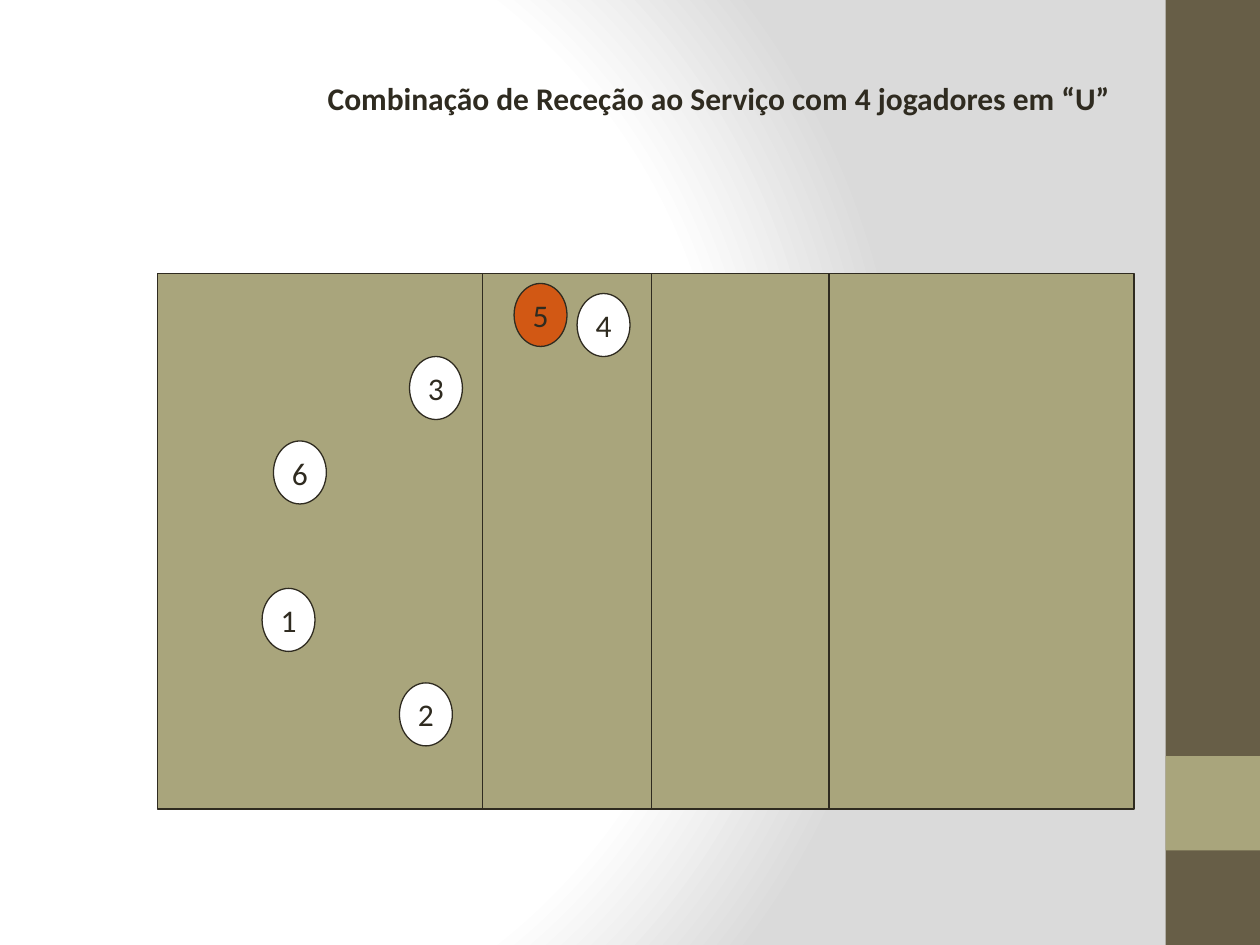
from lxml.etree import SubElement
from pptx import Presentation
from pptx.dml.color import RGBColor
from pptx.enum.shapes import MSO_CONNECTOR, MSO_SHAPE
from pptx.enum.text import MSO_ANCHOR, MSO_AUTO_SIZE, PP_ALIGN
from pptx.oxml import parse_xml
from pptx.oxml.ns import nsdecls, qn
from pptx.util import Inches, Pt

COLORS = {
    "ink": "2F2B20",
    "brown": "675E47",
    "olive": "A9A57C",
    "orange": "D25814",
    "white": "FFFFFF",
    "grey": "DADADA",
}
TEXT_FORMAT = {"name": "Calibri", "size": Pt(18), "bold": False}

# Player number: left, top relative to the court, and fill
PLAYERS = {
    "3": (2.0, 0.66, "white"),
    "4": (3.33, 0.16, "white"),
    "5": (2.83, 0.08, "orange"),
    "6": (0.92, 1.33, "white"),
    "2": (1.92, 3.25, "white"),
    "1": (0.83, 2.5, "white"),
}
COURT_LINES = (2.58, 3.92, 5.33)


def color(name):
    return RGBColor.from_string(COLORS[name])


def write_text(frame, text, align, anchor, **changes):
    frame.word_wrap = False
    frame.vertical_anchor = anchor
    para = frame.paragraphs[0]
    para.alignment = align
    span = para.add_run()
    span.text = text
    for name, value in {**TEXT_FORMAT, **changes}.items():
        setattr(span.font, name, value)
    span.font.color.rgb = color("ink")


def style_line(line):
    line.color.rgb = color("ink")
    line.width = Pt(0.75)


def add_block(page, kind, box, fill, outlined=True):
    block = page.shapes.add_shape(kind, *map(Inches, box))
    block.shadow.inherit = False
    block.fill.solid()
    block.fill.fore_color.rgb = color(fill)
    if outlined:
        style_line(block.line)
    else:
        block.line.fill.background()
    return block


def paint_background(page):
    stops = "".join(
        f'<a:gs pos="{position * 1000}"><a:srgbClr val="{COLORS[name]}"/></a:gs>'
        for position, name in ((0, "white"), (75, "white"), (100, "grey"))
    )
    background = parse_xml(
        f'<p:bg {nsdecls("p", "a")}><p:bgPr><a:gradFill rotWithShape="1">'
        f'<a:gsLst>{stops}</a:gsLst><a:path path="circle">'
        '<a:fillToRect l="20000" t="50000" r="100000" b="50000"/></a:path>'
        "</a:gradFill><a:effectLst/></p:bgPr></p:bg>"
    )
    page.element.cSld.insert(0, background)


def add_side_band(page, box):
    left, top, width, height = box
    add_block(page, MSO_SHAPE.RECTANGLE, box, "brown", outlined=False)
    accent = (left, top + height * 0.8, width, width)
    add_block(page, MSO_SHAPE.RECTANGLE, accent, "olive", outlined=False)


def add_title(page, box, text):
    title = page.shapes.title
    title.left, title.top, title.width, title.height = map(Inches, box)
    write_text(title.text_frame, text, PP_ALIGN.LEFT, MSO_ANCHOR.TOP, bold=True)
    title.text_frame.auto_size = MSO_AUTO_SIZE.SHAPE_TO_FIT_TEXT


def add_court(page, box):
    left, top, width, height = box
    add_block(page, MSO_SHAPE.RECTANGLE, box, "olive")

    # Players
    for number, (across, down, fill) in PLAYERS.items():
        place = (left + across, top + down, 0.42, 0.5)
        player = add_block(page, MSO_SHAPE.OVAL, place, fill)
        write_text(player.text_frame, number, PP_ALIGN.CENTER, MSO_ANCHOR.MIDDLE)

    # Attack lines and net
    for across in COURT_LINES:
        x = Inches(left + across)
        mark = page.shapes.add_connector(
            MSO_CONNECTOR.STRAIGHT, x, Inches(top), x, Inches(top + height)
        )
        style_line(mark.line)
        SubElement(mark.element.spPr, qn("a:effectLst"))


def main():
    deck = Presentation()
    deck.slide_width, deck.slide_height = Inches(10), Inches(7.5)
    page = deck.slides.add_slide(deck.slide_layouts[5])
    paint_background(page)
    add_side_band(page, (9.25, 0, 0.75, 7.5))
    add_title(page, (2.5, 0.58, 6.46, 0.4),
              "Combinação de Receção ao Serviço com 4 jogadores em “U”")
    add_court(page, (1.25, 2.17, 7.75, 4.25))
    deck.save("out.pptx")


if __name__ == "__main__":
    main()
